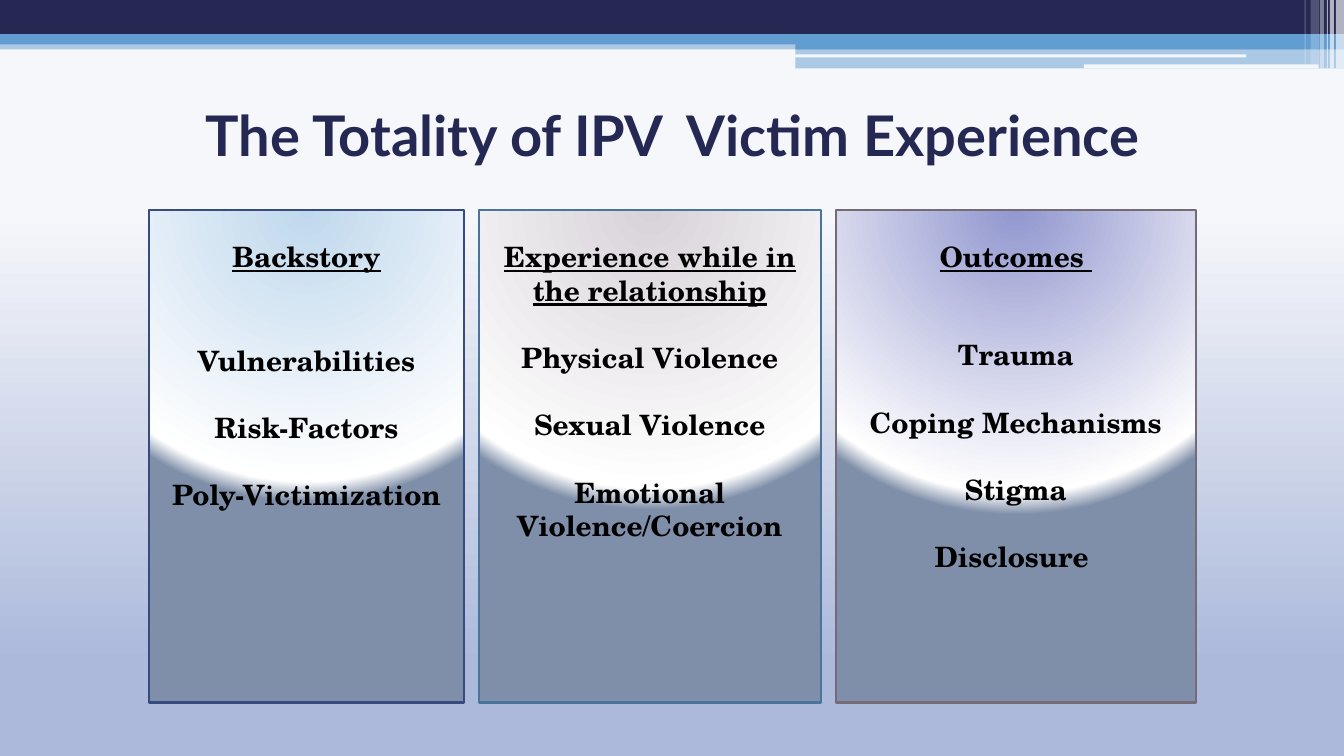
"""Build the slide on the totality of the IPV victim experience."""
from lxml import etree
from pptx import Presentation
from pptx import util as u
from pptx.dml.color import RGBColor
from pptx.enum import shapes, text
from pptx.oxml.ns import qn

HEADLINE = "The Totality of IPV  Victim Experience"
COLUMNS = [
    {"heading": "Backstory", "width": 3.12, "glow": "ice", "edge": "indigo", "gap": 50,
     "items": ["Vulnerabilities", "Risk-Factors", "Poly-Victimization"]},
    {"heading": "Experience while in the relationship", "width": 3.39, "glow": "mauve",
     "edge": "teal", "gap": 24,
     "items": ["Physical Violence", "Sexual Violence", "Emotional Violence/Coercion"]},
    {"heading": "Outcomes ", "width": 3.57, "glow": "violet", "edge": "plum", "gap": 46,
     "items": ["Trauma", "Coping Mechanisms", "Stigma", "Disclosure "]},
]
COLORS = {
    "navy": "242852", "blue": "629DD1", "white": "FFFFFF", "black": "000000",
    "pale": "F6F7FB", "haze": "ACB9DB", "mist": "C8D1E7", "slate": "7F8FA9",
    "ice": "C0D8ED", "mauve": "D8D3D9", "violet": "9297CF",
    "indigo": "374B7F", "teal": "49749B", "plum": "746B76",
}
WIDTH, HEIGHT = 13.33, 7.5
HALF = 7.89
BANDS = [
    (0, 0.4, WIDTH, 0.09, "blue", 50),
    (0, 0, WIDTH, 0.34, "navy", 100),
    (0, 0.34, WIDTH, 0.1, "blue", 100),
    (HALF, 0.39, WIDTH - HALF, 0.1, "blue", 100),
    (HALF, 0.48, WIDTH - HALF, 0.2, "blue", 50),
    (HALF, 0.54, 4.47, 0.03, "pale", 100),
    (10.75, 0.64, 2.33, 0.04, "pale", 100),
]
STRIPES = [
    (13.25, 0.08, 0.68, 65), (13.19, 0.04, 0.68, 65), (13.16, 0.01, 0.68, 60),
    (13.09, 0.04, 0.68, 40), (13, 0.08, 0.64, 20), (12.94, 0.01, 0.64, 30),
]
SKY = [(28, "pale"), (88, "haze"), (100, "haze"), (100, "mist")]
LEFT, TOP, COLUMN_HEIGHT, GUTTER = 1.48, 2.08, 4.89, 0.15
ITEM_GAP = 24


def rgb(name):
    return RGBColor.from_string(COLORS[name])


def add_rect(slide, left, top, width, height):
    rect = slide.shapes.add_shape(
        shapes.MSO_SHAPE.RECTANGLE, *map(u.Inches, (left, top, width, height)))
    rect.shadow.inherit = False
    return rect


def add_band(slide, left, top, width, height, color, opacity):
    band = add_rect(slide, left, top, width, height)
    band.line.fill.background()
    band.fill.solid()
    band.fill.fore_color.rgb = rgb(color)
    if opacity < 100:
        tint = band.element.spPr.find(".//" + qn("a:srgbClr"))
        etree.SubElement(tint, qn("a:alpha"), val=str(opacity * 1000))


def set_gradient(owner, fill, stops, glow=False):
    fill.gradient()
    gradient = owner.element.find(".//" + qn("a:gradFill"))
    for child in list(gradient):
        gradient.remove(child)
    stop_list = etree.SubElement(gradient, qn("a:gsLst"))
    for position, color in stops:
        stop = etree.SubElement(stop_list, qn("a:gs"), pos=str(position * 1000))
        etree.SubElement(stop, qn("a:srgbClr"), val=COLORS[color])
    if glow:
        circle = etree.SubElement(gradient, qn("a:path"), {"path": "circle"})
        etree.SubElement(circle, qn("a:fillToRect"),
                         l="50000", t="-80000", r="50000", b="180000")
    else:
        etree.SubElement(gradient, qn("a:lin"), ang="5400000", scaled="0")


def write(paragraph, words, size=20, font="TeX Gyre Schola", color="black",
          underline=False, before=0):
    paragraph.alignment = text.PP_ALIGN.CENTER
    paragraph.space_before = u.Pt(before)
    run = paragraph.add_run()
    run.text = words
    run.font.size, run.font.name = u.Pt(size), font
    run.font.bold, run.font.underline = True, underline
    run.font.color.rgb = rgb(color)


def add_column(slide, left, column):
    panel = add_rect(slide, left, TOP, column["width"], COLUMN_HEIGHT)
    set_gradient(panel, panel.fill,
                 [(0, column["glow"]), (93, "white"), (100, "slate")], glow=True)
    panel.line.color.rgb = rgb(column["edge"])
    panel.line.width = u.Pt(1.5)
    frame = panel.text_frame
    frame.word_wrap = True
    frame.vertical_anchor = text.MSO_ANCHOR.TOP
    frame.margin_top = u.Inches(0.3)
    write(frame.paragraphs[0], column["heading"], underline=True)
    for index, item in enumerate(column["items"]):
        write(frame.add_paragraph(), item, before=ITEM_GAP if index else column["gap"])


def main():
    deck = Presentation()
    deck.slide_width, deck.slide_height = u.Inches(WIDTH), u.Inches(HEIGHT)
    slide = deck.slides.add_slide(deck.slide_layouts[5])
    set_gradient(slide, slide.background.fill, SKY)

    for band in BANDS:
        add_band(slide, *band)
    for left, width, height, opacity in STRIPES:
        add_band(slide, left, 0, width, height, "white", opacity)

    title = slide.shapes.title
    title.left, title.top = u.Inches(0.67), u.Inches(0.75)
    title.width, title.height = u.Inches(12), u.Inches(1.17)
    title.text_frame.word_wrap = True
    title.text_frame.vertical_anchor = text.MSO_ANCHOR.MIDDLE
    write(title.text_frame.paragraphs[0], HEADLINE, size=40, font="Lato", color="navy")

    left = LEFT
    for column in COLUMNS:
        add_column(slide, left, column)
        left += column["width"] + GUTTER

    deck.save("out.pptx")


if __name__ == "__main__":
    main()
